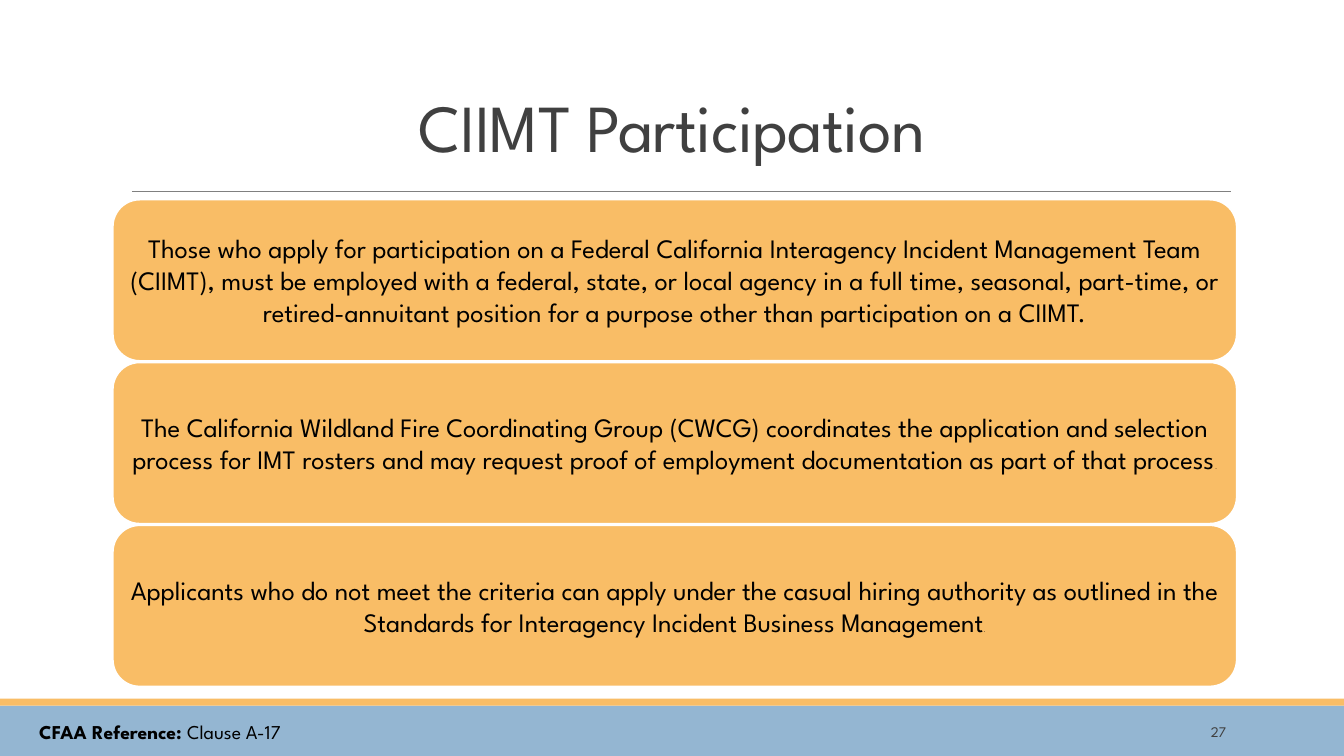
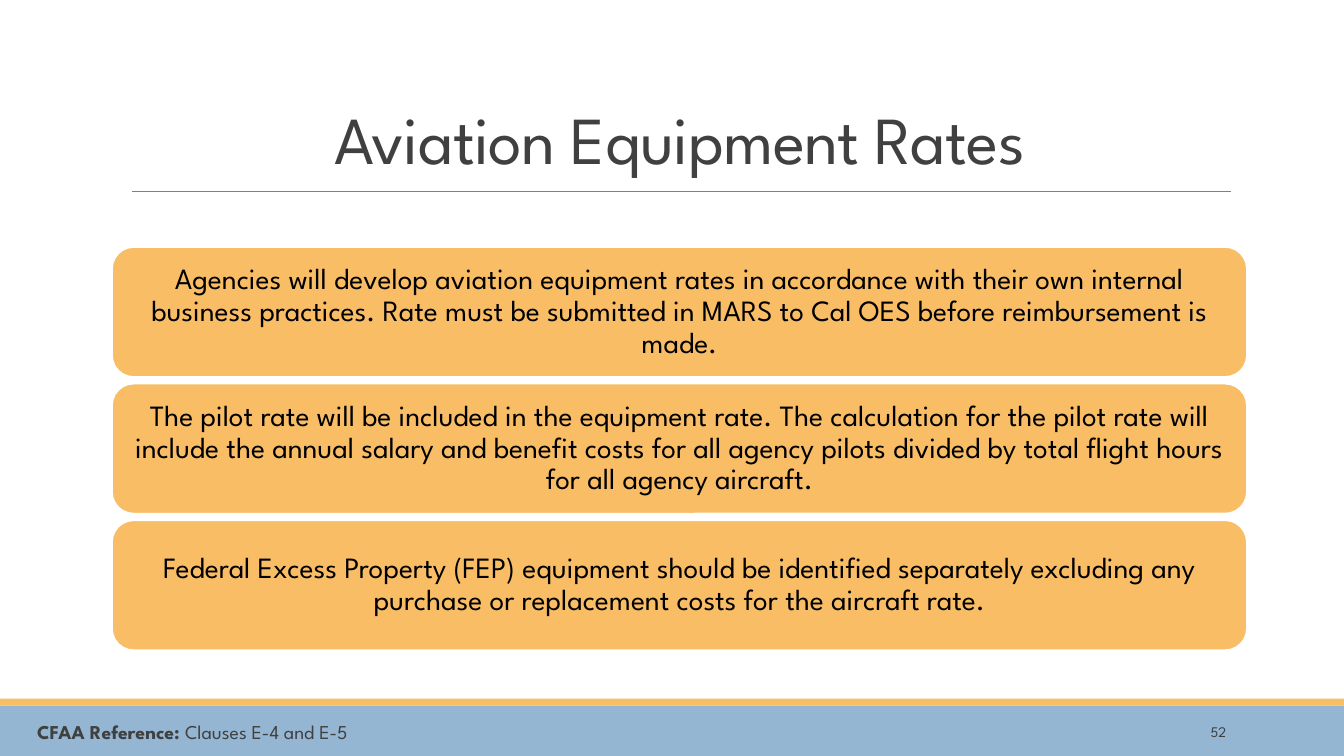
from pptx import Presentation
from pptx.dml.color import RGBColor
from pptx.enum.shapes import MSO_CONNECTOR as Conn, MSO_SHAPE as Kind
from pptx.enum.text import MSO_ANCHOR as Anchor, MSO_AUTO_SIZE as Fit, PP_ALIGN as Align
from pptx.oxml.ns import qn
from pptx.util import Pt
from lxml.etree import SubElement

FONT = "League Spartan"
BLUE, GOLD, GREY, DARK, BLACK, WHITE = "94B6D2", "F9BD66", "808080", "404040", "000000", "FFFFFF"


def paint(item, color):
    if hasattr(item, "solid"):
        item.solid()
        item = item.fore_color
    else:
        item = item.color
    item.rgb = RGBColor.from_string(color)


def style(para, size, color, align=Align.LEFT):
    para.alignment = align
    para.font.name = FONT
    para.font.size = Pt(size)
    paint(para.font, color)


deck = Presentation()
deck.slide_width, deck.slide_height = Pt(960), Pt(540)
base = deck.slide_layouts[5]

pages = [
    dict(
        title="CIIMT Participation", head=(120, 28, 720, 94.5),
        clause="Clause A-17", ref=(20.9, BLACK), num="27",
        grid=(80.6, 142.6, 802.8, 115.2, 116.3), size=19, lead=1, pad=6,
        cards=[
            ("Those who apply for participation on a Federal California Interagency Incident Management Team (CIIMT), must be employed with a federal, state, or local agency in a full time, seasonal, part-time, or retired-annuitant position for a purpose other than participation on a CIIMT.", ""),
            ("The California Wildland Fire Coordinating Group (CWCG) coordinates the application and selection process for IMT rosters and may request proof of employment documentation as part of that process", "."),
            ("Applicants who do not meet the criteria can apply under the casual hiring authority as outlined in the Standards for Interagency Incident Business Management", "."),
        ],
    ),
    dict(
        title="Aviation Equipment Rates", head=(92, 36, 787, 95),
        clause="Clauses E-4 and E-5", ref=(19.4, DARK), num="52",
        grid=(80, 176.4, 810.7, 92.9, 97.6), size=21, lead=0.9, pad=6.5,
        cards=[
            ("Agencies will develop aviation equipment rates in accordance with their own internal business practices. Rate must be submitted in MARS to Cal OES before reimbursement is made.", ""),
            ("The pilot rate will be included in the equipment rate. The calculation for the pilot rate will include the annual salary and benefit costs for all agency pilots divided by total flight hours for all agency aircraft.", ""),
            ("Federal Excess Property (FEP) equipment should be identified separately excluding any purchase or replacement costs for the aircraft rate.", ""),
        ],
    ),
]
slides = [deck.slides.add_slide(base) for page in pages]

shared = []
for top, high, color in [(504, 36, BLUE), (499, 5, GOLD)]:
    band = slides[0].shapes.add_shape(Kind.RECTANGLE, 0, Pt(top), Pt(960), Pt(high))
    band.shadow.inherit = False
    paint(band.fill, color)
    band.line.fill.background()
    shared.append(band)
rule = slides[0].shapes.add_connector(Conn.STRAIGHT, Pt(94.3), Pt(136.6), Pt(879), Pt(136.6))
paint(rule.line, GREY)
rule.line.width = Pt(0.5)
SubElement(rule.element.spPr, qn("a:effectLst"))
shared.append(rule)
for code, part in enumerate(shared, 101):
    part.element.xpath(".//p:cNvPr")[0].set("id", str(code))
    base.shapes.element.append(part.element)

for slide, page in zip(slides, pages):
    title = slide.shapes.title
    title.left, title.top, title.width, title.height = map(Pt, page["head"])
    frame = title.text_frame
    frame.text = page["title"]
    frame.auto_size = Fit.NONE
    frame.vertical_anchor = Anchor.BOTTOM
    para = frame.paragraphs[0]
    style(para, 48, DARK, Align.CENTER)
    para.line_spacing = 0.85
    para.runs[0].font.element.set("spc", "-50") if hasattr(para.runs[0].font, "element") else para.runs[0]._r.get_or_add_rPr().set("spc", "-50")

    left, top, wide, high, step = page["grid"]
    for row, (text, end) in enumerate(page["cards"]):
        card = slide.shapes.add_shape(Kind.ROUNDED_RECTANGLE, Pt(left), Pt(top + row * step), Pt(wide), Pt(high))
        card.shadow.inherit = False
        paint(card.fill, GOLD)
        paint(card.line, WHITE)
        card.line.width = Pt(1.25)
        frame = card.text_frame
        frame.word_wrap = True
        frame.vertical_anchor = Anchor.MIDDLE
        frame.margin_left = frame.margin_right = frame.margin_top = frame.margin_bottom = Pt(page["pad"])
        para = frame.paragraphs[0]
        para.add_run().text = text
        style(para, page["size"], BLACK, Align.CENTER)
        para.line_spacing = page["lead"]
        if end:
            dot = para.add_run()
            dot.text = end
            dot.font.size = Pt(5)

    left, color = page["ref"]
    note = slide.shapes.add_textbox(Pt(left), Pt(510.5), Pt(324), Pt(24.5))
    note.text_frame.word_wrap = True
    para = note.text_frame.paragraphs[0]
    for text, bold in [("CFAA Reference: ", True), (page["clause"], False)]:
        run = para.add_run()
        run.text = text
        run.font.bold = bold
    style(para, 14, color)

    num = slide.shapes.add_textbox(Pt(780), Pt(508.3), Pt(103), Pt(28.8))
    num.text_frame.word_wrap = True
    num.text_frame.vertical_anchor = Anchor.MIDDLE
    num.text_frame.text = page["num"]
    style(num.text_frame.paragraphs[0], 10.5, DARK, Align.RIGHT)

deck.save("out.pptx")
